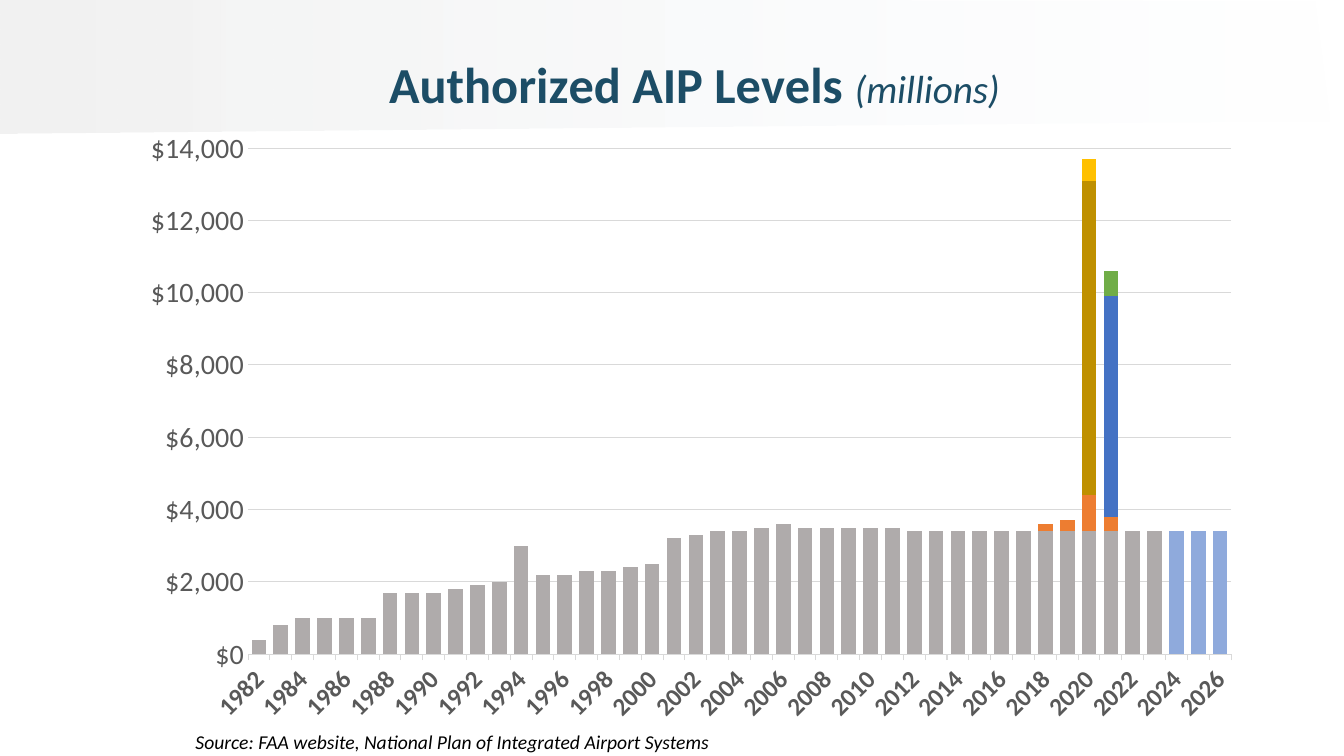
from lxml import etree
from pptx import Presentation
from pptx.chart.data import CategoryChartData
from pptx.dml.color import RGBColor
from pptx.enum.chart import XL_CHART_TYPE, XL_TICK_MARK
from pptx.enum.text import MSO_AUTO_SIZE
from pptx.oxml.ns import qn
from pptx.util import Inches, Pt

STACKED = XL_CHART_TYPE.COLUMN_STACKED
TICK_NONE, TICK_OUTSIDE = XL_TICK_MARK.NONE, XL_TICK_MARK.OUTSIDE
FONT = "Calibri"
NAVY, LABEL_GRAY, LINE_GRAY, BLACK = "1C4D66", "595959", "D9D9D9", "000000"

# Content
TITLE = [
    ("Authorized AIP Levels ", {"size": 36, "bold": True}),
    ("(millions)", {"size": 28, "bold": False, "italic": True}),
]
SOURCE = "Source: FAA website, National Plan of Integrated Airport Systems"
YEARS = range(1982, 2027)
BASE_LEVELS = [
    400, 800, 1000, 1000, 1000, 1000, 1700, 1700, 1700, 1800, 1900, 2000,
    3000, 2200, 2200, 2300, 2300, 2400, 2500, 3200, 3300, 3400, 3400, 3500,
    3600, 3500, 3500, 3500, 3500, 3500,
] + [3400] * 15
# Series name, amount by year, colour, colours of single years
SERIES = [
    ("Series 1", dict(zip(YEARS, BASE_LEVELS)), "AFABAB",
     {2024: "8FAADC", 2025: "8FAADC", 2026: "8FAADC"}),
    ("Series 2", {2018: 200, 2019: 300, 2020: 1000, 2021: 400}, "ED7D31", {}),
    ("Series 3", {2020: 8700}, "A5A5A5", {2020: "BF9000"}),
    ("Series 4", {2020: 600}, "FFC000", {}),
    ("Series 5", {2021: 6100}, "4472C4", {}),
    ("Series 6", {2021: 700}, "70AD47", {}),
]

# Places in inches: left, top, width, height
CHART_BOX = (1.27, 0.25, 11.17, 7.05)
PLOT_BOX = (2.46, 1.47, 9.75, 5.02)
TITLE_CORNER = (3.83, 0.5)
SOURCE_BOX = (1.84, 7.19, 5.34, 0.34)
BAND_OUTLINE = [(13.04, 0.02), (6.18, 0), (0, 0), (0, 1.32), (13.19, 1.19)]


def color(hex_value):
    return RGBColor.from_string(hex_value)


def format_font(font, size, hex_value, bold=False, italic=False):
    font.name, font.size = FONT, Pt(size)
    font.bold, font.italic = bold, italic
    font.color.rgb = color(hex_value)


def add_text(paragraph, text, size, hex_value, bold=False, italic=False):
    run = paragraph.add_run()
    run.text = text
    format_font(run.font, size, hex_value, bold, italic)


def format_line(line, hex_value):
    line.color.rgb = color(hex_value)
    line.width = Pt(0.75)


def set_layout(parent, index, place, inner=False):
    """Fix a chart part at a place given in slide inches."""
    for old_layout in parent.findall(qn("c:layout")):
        parent.remove(old_layout)
    layout = etree.Element(qn("c:layout"))
    manual = etree.SubElement(layout, qn("c:manualLayout"))
    left, top, width, height = CHART_BOX
    settings = [("layoutTarget", "inner")] if inner else []
    settings += [("xMode", "edge"), ("yMode", "edge"),
                 ("x", (place[0] - left) / width),
                 ("y", (place[1] - top) / height)]
    if len(place) == 4:
        settings += [("w", place[2] / width), ("h", place[3] / height)]
    for tag, value in settings:
        etree.SubElement(manual, qn("c:" + tag)).set("val", str(value))
    parent.insert(index, layout)


def add_band(slide):
    points = [(Inches(x), Inches(y)) for x, y in BAND_OUTLINE]
    builder = slide.shapes.build_freeform(*points[0])
    builder.add_line_segments(points[1:], close=True)
    band = builder.convert_to_shape()
    band.shadow.inherit = False
    band.line.fill.background()
    band.fill.gradient()
    band.fill.gradient_angle = 0
    start, end = band.fill.gradient_stops
    start.color.rgb, end.color.rgb = color("F2F2F2"), color("F7FAFD")
    start.position, end.position = 0, 1
    # The right end fades to 4 % opacity
    last_color = list(band._element.iter(qn("a:srgbClr")))[-1]
    etree.SubElement(last_color, qn("a:alpha")).set("val", "4000")


def add_levels_chart(slide):
    data = CategoryChartData()
    data.categories = [str(year) for year in YEARS]
    for name, amounts, _, _ in SERIES:
        data.add_series(name, [amounts.get(year) for year in YEARS])
    box = [Inches(value) for value in CHART_BOX]
    chart = slide.shapes.add_chart(STACKED, *box, data).chart
    chart.has_legend = False
    format_font(chart.font, 10, BLACK)

    # Title
    chart.has_title = True
    title_paragraph = chart.chart_title.text_frame.paragraphs[0]
    for text, style in TITLE:
        add_text(title_paragraph, text, hex_value=NAVY, **style)
    set_layout(chart.chart_title._element, 1, TITLE_CORNER)

    # Columns
    plot = chart.plots[0]
    plot.gap_width, plot.overlap = 49, 100
    plot.vary_by_categories = False
    for series, (_, _, fill, year_fills) in zip(plot.series, SERIES):
        series.invert_if_negative = False
        series.format.fill.solid()
        series.format.fill.fore_color.rgb = color(fill)
        for year, year_fill in year_fills.items():
            point_fill = series.points[YEARS.index(year)].format.fill
            point_fill.solid()
            point_fill.fore_color.rgb = color(year_fill)
    plot_area = chart._chartSpace.find(".//" + qn("c:plotArea"))
    set_layout(plot_area, 0, PLOT_BOX, inner=True)

    # Dollar axis
    dollars = chart.value_axis
    dollars.minimum_scale, dollars.maximum_scale = 0, 14000
    dollars.major_unit = 2000
    dollars.major_tick_mark = dollars.minor_tick_mark = TICK_NONE
    dollars.tick_labels.number_format = '"$"#,##0'
    dollars.tick_labels.number_format_is_linked = False
    dollars.format.line.fill.background()
    format_line(dollars.major_gridlines.format.line, LINE_GRAY)
    format_font(dollars.tick_labels.font, 20, LABEL_GRAY)

    # Year axis: every second label, turned 45 degrees
    years = chart.category_axis
    years.major_tick_mark, years.minor_tick_mark = TICK_OUTSIDE, TICK_NONE
    format_line(years.format.line, LINE_GRAY)
    format_font(years.tick_labels.font, 18, LABEL_GRAY, bold=True)
    axis = years._element
    axis.find(qn("c:txPr")).find(qn("a:bodyPr")).set("rot", "-2700000")
    skip = etree.Element(qn("c:tickLblSkip"))
    skip.set("val", "2")
    axis.find(qn("c:noMultiLvlLbl")).addprevious(skip)


def add_source(slide):
    box = slide.shapes.add_textbox(*[Inches(value) for value in SOURCE_BOX])
    frame = box.text_frame
    frame.word_wrap = False
    frame.auto_size = MSO_AUTO_SIZE.SHAPE_TO_FIT_TEXT
    add_text(frame.paragraphs[0], SOURCE, 14, BLACK, italic=True)


def main():
    presentation = Presentation()
    presentation.slide_width = Inches(13.33)
    presentation.slide_height = Inches(7.5)
    slide = presentation.slides.add_slide(presentation.slide_layouts[6])
    add_band(slide)
    add_levels_chart(slide)
    add_source(slide)
    presentation.save("out.pptx")


if __name__ == "__main__":
    main()
